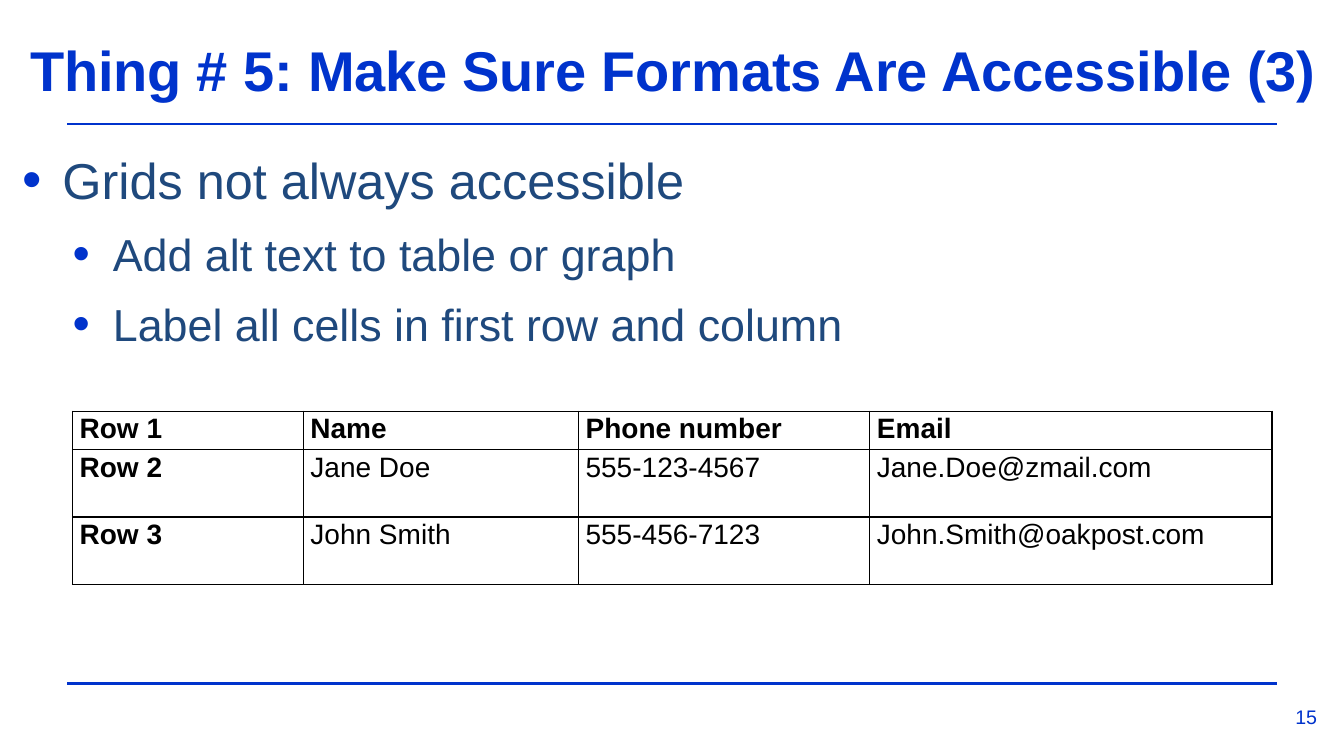
"""Build the slide on accessible formats, on a grid of 40 columns by 45 rows."""
import pptx
import pptx.util
import pptx.dml.color
import pptx.enum.shapes
import pptx.enum.text
import pptx.oxml.ns
import lxml.etree

THEME = {
    "font": "Arial",
    "blue": "0033CC", "navy": "1F497D", "black": "000000",
    "title": 40, "main": 36, "sub": 32, "cell": 20, "page": 14,
    "rule": 1.56, "edge": 1,
}
qn = pptx.oxml.ns.qn
Pt = pptx.util.Pt

deck = pptx.Presentation()
deck.slide_width = pptx.util.Inches(13.33)
deck.slide_height = pptx.util.Inches(7.5)
COL = deck.slide_width / 40
ROW = deck.slide_height / 45
slide = deck.slides.add_slide(deck.slide_layouts[6])


def add_box(left, top, width, height, inset=0):
    """Add a text box placed in grid units and return its frame."""
    box = slide.shapes.add_textbox(
        int(left * COL), int(top * ROW), int(width * COL), int(height * ROW))
    frame = box.text_frame
    frame.word_wrap = True
    frame.margin_left = frame.margin_right = frame.margin_bottom = 0
    frame.margin_top = int(inset * ROW)
    return frame


def add_run(para, text, size, tint, bold=False):
    """Add one run of text in the theme font."""
    run = para.add_run()
    run.text = text
    run.font.name = THEME["font"]
    run.font.size = Pt(THEME[size])
    run.font.bold = bold
    run.font.color.rgb = pptx.dml.color.RGBColor.from_string(THEME[tint])
    return run


for level in (7.38, 40.68):
    y = int(level * ROW)
    rule = slide.shapes.add_connector(
        pptx.enum.shapes.MSO_CONNECTOR.STRAIGHT, int(2 * COL), y, int(38 * COL), y)
    rule.line.color.rgb = pptx.dml.color.RGBColor.from_string(THEME["blue"])
    rule.line.width = Pt(THEME["rule"])
    lxml.etree.SubElement(rule._element.spPr, qn("a:effectLst"))

para = add_box(0.1, 1.98, 39.84, 4.14, 0.12).paragraphs[0]
para.alignment = pptx.enum.text.PP_ALIGN.CENTER
title = add_run(para, "Thing # 5: Make Sure Formats Are Accessible (3)",
                "title", "blue", True)
title.font._element.set("spc", "-10")

points = [
    (0, "Grids not always accessible"),
    (1, "Add alt text to table or graph"),
    (1, "Label all cells in first row and column"),
]
body = add_box(0.63, 8.46, 38.73, 17.16, 0.42)
for i, (depth, text) in enumerate(points):
    para = body.add_paragraph() if i else body.paragraphs[0]
    para.level = depth
    props = para._p.get_or_add_pPr()
    props.set("marL", str(int((1.23 + 1.5 * depth) * COL)))
    props.set("indent", str(int(-1.2 * COL)))
    tint = lxml.etree.SubElement(props, qn("a:buClr"))
    lxml.etree.SubElement(tint, qn("a:srgbClr"), val=THEME["blue"])
    lxml.etree.SubElement(props, qn("a:buSzPct"), val="110000")
    lxml.etree.SubElement(props, qn("a:buFont"), typeface=THEME["font"])
    lxml.etree.SubElement(props, qn("a:buChar"), char="•")
    if i:
        para.space_before = Pt(12)
    add_run(para, text, "sub" if depth else "main", "navy")

people = [
    ["Row 1", "Name", "Phone number", "Email"],
    ["Row 2", "Jane Doe", "555-123-4567", "Jane.Doe@zmail.com"],
    ["Row 3", "John Smith", "555-456-7123", "John.Smith@oakpost.com"],
]
widths = [6.87, 8.19, 8.67, 11.97]
heights = [2.28, 4.02, 4.02]
table = slide.shapes.add_table(
    len(heights), len(widths), int(2.16 * COL), int(24.48 * ROW),
    int(sum(widths) * COL), int(sum(heights) * ROW)).table
table.first_row = table.horz_banding = False
for column, width in zip(table.columns, widths):
    column.width = int(width * COL)
for line, height in zip(table.rows, heights):
    line.height = int(height * ROW)
for r, texts in enumerate(people):
    for c, text in enumerate(texts):
        cell = table.cell(r, c)
        cell.margin_left = cell.margin_right = int(0.21 * COL)
        cell.margin_top = cell.margin_bottom = 0
        props = cell._tc.get_or_add_tcPr()
        for side in ("a:lnL", "a:lnR", "a:lnT", "a:lnB"):
            edge = lxml.etree.SubElement(props, qn(side), w=str(Pt(THEME["edge"])))
            fill = lxml.etree.SubElement(edge, qn("a:solidFill"))
            lxml.etree.SubElement(fill, qn("a:srgbClr"), val=THEME["black"])
        cell.fill.background()
        para = cell.text_frame.paragraphs[0]
        para.line_spacing = 1.07
        add_run(para, text, "cell", "black", r == 0 or c == 0)

para = add_box(38.55, 42, 0.81, 1.5).paragraphs[0]
para.line_spacing = Pt(16.5)
add_run(para, "15", "page", "blue")

deck.save("out.pptx")
